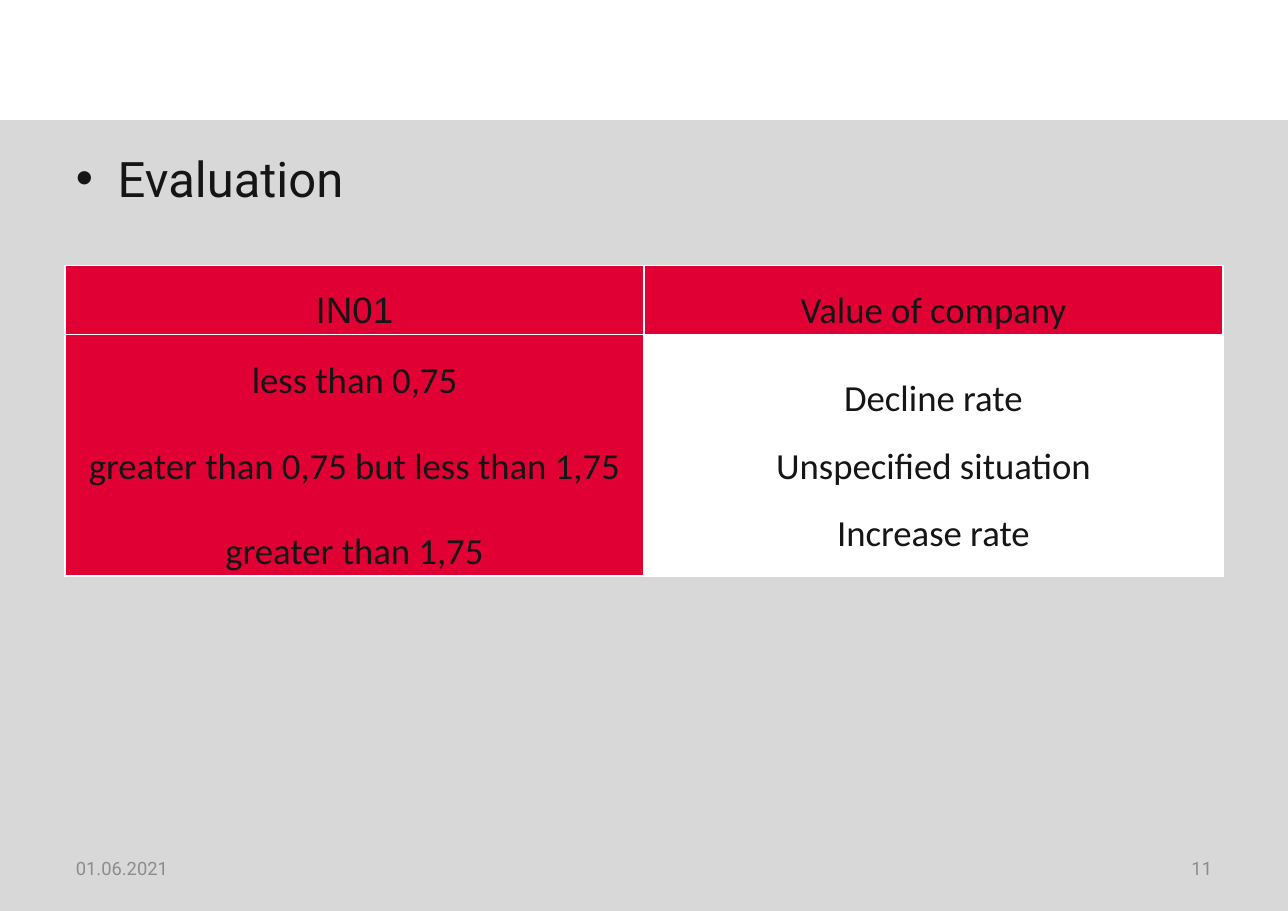
from lxml import etree
from pptx import Presentation, util as u
from pptx.dml.color import RGBColor
from pptx.enum import shapes, text
from pptx.oxml.ns import qn

WIDE, HIGH = 11.69, 8.27
EDGE = 0.59
SPAN = WIDE - 2 * EDGE
BAND = 1.09
INK, GREY, RED, WHITE, PALE = "151515", "8C8C8C", "E00034", "FFFFFF", "D8D8D8"
LEFT, MID, RIGHT = text.PP_ALIGN.LEFT, text.PP_ALIGN.CENTER, text.PP_ALIGN.RIGHT

TITLE = "Evaluation"
FOOT = [("01.06.2021", EDGE, LEFT), ("11", WIDE - EDGE - 2.73, RIGHT)]
ROWS = [0.63, 2.19]
CELLS = [
    [(RED, "Arial", [["IN01"]]),
     (RED, "Calibri", [["Value of company"]])],
    [(RED, "Calibri", [["less than 0,75"],
                       ["greater than 0,75 but less than 1,75"],
                       ["greater than 1,75"]]),
     (WHITE, "Calibri", [["Decline rate", "Unspecified situation", "Increase rate"]])],
]


def color(code):
    return RGBColor.from_string(code)


def write(para, words, size, face, tint):
    run = para.add_run()
    run.text = words
    run.font.size = u.Pt(size)
    run.font.name = face
    run.font.color.rgb = color(tint)


def box(left, top, width, height):
    frame = slide.shapes.add_textbox(*map(u.Inches, (left, top, width, height))).text_frame
    frame.word_wrap = True
    return frame


def border(cell):
    props = cell._tc.get_or_add_tcPr()
    for spot, side in enumerate(("a:lnL", "a:lnR", "a:lnT", "a:lnB")):
        line = etree.Element(qn(side), w=str(u.Pt(1)))
        fill = etree.SubElement(line, qn("a:solidFill"))
        etree.SubElement(fill, qn("a:srgbClr"), val=WHITE)
        props.insert(spot, line)


def fill_cell(cell, back, face, paras):
    cell.fill.solid()
    cell.fill.fore_color.rgb = color(back)
    cell.vertical_anchor = text.MSO_ANCHOR.MIDDLE
    cell.margin_left = cell.margin_right = u.Inches(0.01)
    cell.margin_top = cell.margin_bottom = u.Inches(0.01)
    border(cell)
    frame = cell.text_frame
    for i, lines in enumerate(paras):
        para = frame.add_paragraph() if i else frame.paragraphs[0]
        para.alignment = MID
        para.line_spacing = 1.5
        para.space_after = u.Pt(6)
        if i:
            para.space_before = u.Pt(6)
        for j, words in enumerate(lines):
            if j:
                para.add_line_break()
            write(para, words, 24, face, INK)


deck = Presentation()
deck.slide_width, deck.slide_height = u.Inches(WIDE), u.Inches(HIGH)
slide = deck.slides.add_slide(deck.slide_layouts[6])

panel = slide.shapes.add_shape(
    shapes.MSO_SHAPE.RECTANGLE, 0, u.Inches(BAND), u.Inches(WIDE), u.Inches(HIGH - BAND))
panel.shadow.inherit = False
panel.fill.solid()
panel.fill.fore_color.rgb = color(PALE)
panel.line.fill.background()

head = box(EDGE, 1.3, SPAN, 0.8).paragraphs[0]
props = head._p.get_or_add_pPr()
props.set("marL", str(u.Inches(0.38)))
props.set("indent", str(-u.Inches(0.38)))
etree.SubElement(props, qn("a:buFont"), typeface="Arial")
etree.SubElement(props, qn("a:buChar"), char="•")
write(head, TITLE, 32, "Roboto", INK)

for words, left, side in FOOT:
    frame = box(left, 7.66, 2.73, 0.44)
    frame.vertical_anchor = text.MSO_ANCHOR.MIDDLE
    frame.paragraphs[0].alignment = side
    write(frame.paragraphs[0], words, 12, "Roboto", GREY)

grid = slide.shapes.add_table(
    len(ROWS), 2, *map(u.Inches, (EDGE, 2.41, SPAN, sum(ROWS)))).table
for r, tall in enumerate(ROWS):
    grid.rows[r].height = u.Inches(tall)
    for c, part in enumerate(CELLS[r]):
        fill_cell(grid.cell(r, c), *part)

deck.save("out.pptx")
